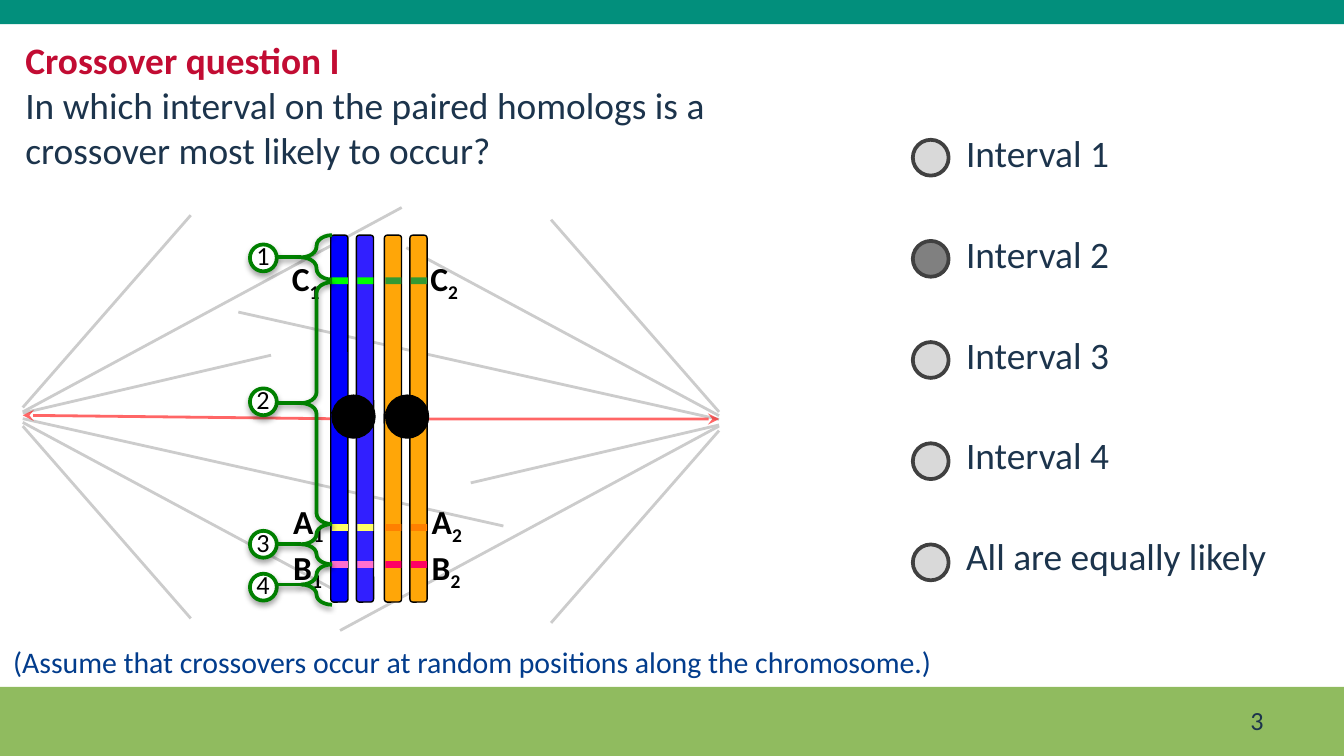
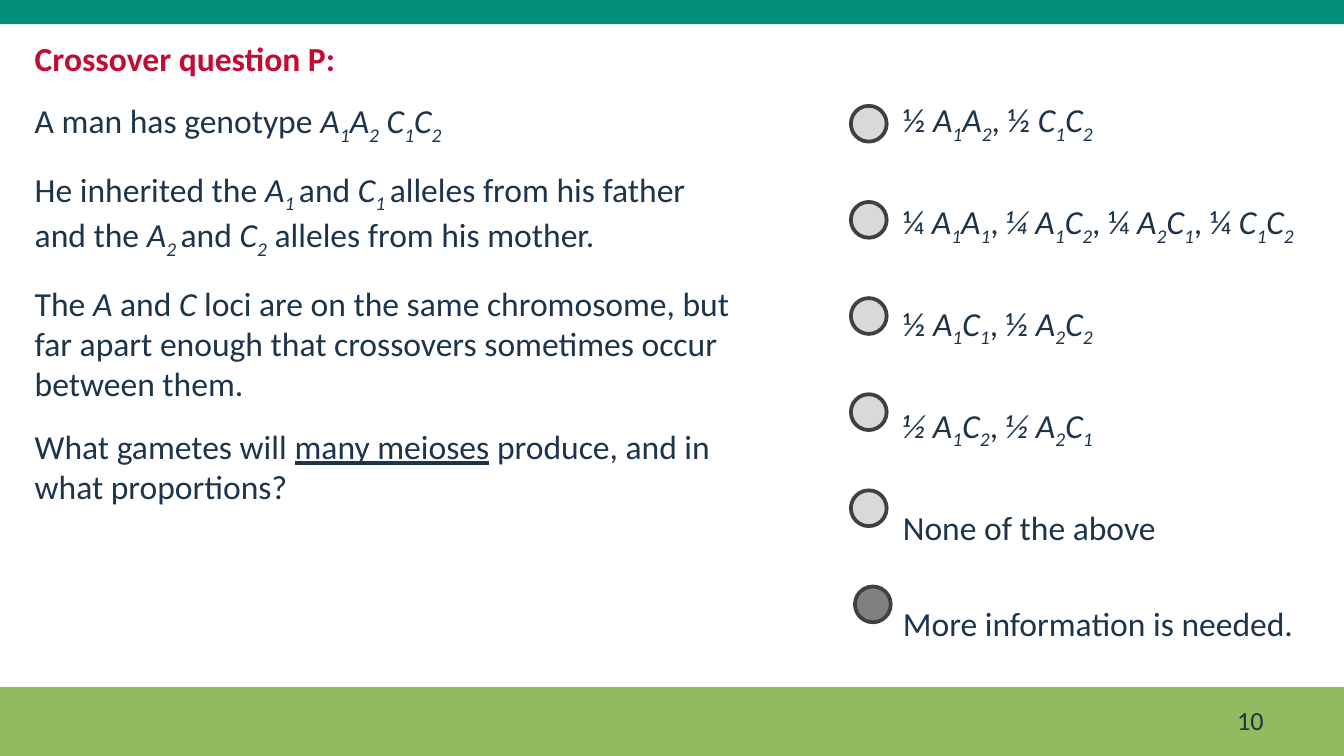
from pptx import Presentation
from pptx.dml.color import RGBColor
from pptx.enum.shapes import MSO_CONNECTOR, MSO_SHAPE
from pptx.enum.text import MSO_ANCHOR, MSO_AUTO_SIZE, PP_ALIGN
from pptx.oxml.ns import qn
from pptx.util import Pt
from lxml.etree import SubElement

WIDTH, HEIGHT = 720, 405
INK, RED, NAVY, BLACK, WHITE = "1C344C", "C20C33", "023C8C", "000000", "FFFFFF"
TEAL, LEAF, GREEN, FIBRE, PULL = "028F7C", "90BB5F", "008000", "CCCCCC", "FF0000"
BUTTON, CHOSEN, BUTTON_EDGE = "D9D9D9", "808080", "404040"
TITLE = {"bold": True, "color": RED}
LABEL = {"size": 18, "bold": True, "color": BLACK}
MARKS = {"*": "italic", "_": "sub", "~": "underline"}


# Formatting helpers
def paint(fill, color):
    fill.solid()
    fill.fore_color.rgb = RGBColor.from_string(color)


def add_shadow(effects, alpha, blur, dist):
    shadow = SubElement(effects, qn("a:outerShdw"), blurRad=str(Pt(blur)),
                        dist=str(Pt(dist)), dir="5400000", rotWithShape="0")
    color = SubElement(shadow, qn("a:srgbClr"), val=BLACK)
    SubElement(color, qn("a:alpha"), val=str(alpha * 1000))


def shape(parent, kind, box, fill=None, line=None, width=0.75, shadow=None, adj=None):
    sp = parent.shapes.add_shape(kind, *map(Pt, box))
    sp.shadow.inherit = False
    if adj is not None:
        sp.adjustments[0] = adj
    if fill:
        paint(sp.fill, fill)
    else:
        sp.fill.background()
    if line:
        paint(sp.line.fill, line)
        sp.line.width = Pt(width)
    else:
        sp.line.fill.background()
    if shadow:
        add_shadow(sp._element.spPr.find(qn("a:effectLst")), *shadow)
    return sp


def line(parent, start, end, color, width=1.5, shadow=None, alpha=None, head=None):
    c = parent.shapes.add_connector(MSO_CONNECTOR.STRAIGHT, *map(Pt, start + end))
    paint(c.line.fill, color)
    c.line.width = Pt(width)
    ln = c.line._get_or_add_ln()
    if alpha:
        SubElement(ln.find(".//" + qn("a:srgbClr")), qn("a:alpha"), val=str(alpha * 1000))
    if head:
        SubElement(ln, qn("a:headEnd"), type=head)
    effects = SubElement(c._element.spPr, qn("a:effectLst"))
    if shadow:
        add_shadow(effects, *shadow)


def split_runs(marked):
    """Yield (text, styles): * toggles italic, _ subscript, ~ underline."""
    styles, buffer = set(), ""
    for ch in marked:
        if ch in MARKS:
            if buffer:
                yield buffer, set(styles)
            buffer = ""
            styles ^= {MARKS[ch]}
        else:
            buffer += ch
    if buffer:
        yield buffer, set(styles)


def add_runs(p, marked, size=18, color=INK, bold=False):
    for words, styles in split_runs(marked):
        r = p.add_run()
        r.text = words
        fmt = {"name": "Calibri", "size": Pt(size), "bold": bold}
        fmt.update({style: True for style in styles - {"sub"}})
        for key, value in fmt.items():
            setattr(r.font, key, value)
        paint(r.font.fill, color)
        if "sub" in styles:
            r._r.get_or_add_rPr().set("baseline", "-25000")


def text(parent, box, paragraphs, after=0, wrap=True, grow=True, hang=0,
         align=PP_ALIGN.LEFT, anchor=MSO_ANCHOR.TOP, **fmt):
    tf = parent.shapes.add_textbox(*map(Pt, box)).text_frame
    frame = {"word_wrap": wrap, "vertical_anchor": anchor,
             "auto_size": MSO_AUTO_SIZE.SHAPE_TO_FIT_TEXT if grow else MSO_AUTO_SIZE.NONE}
    for key, value in frame.items():
        setattr(tf, key, value)
    for i, item in enumerate(paragraphs):
        marked, own = item if isinstance(item, tuple) else (item, {})
        p = tf.add_paragraph() if i else tf.paragraphs[0]
        p.alignment, p.space_after = align, Pt(after)
        if hang:
            pPr = p._p.get_or_add_pPr()
            pPr.set("marL", str(Pt(hang)))
            pPr.set("indent", str(-Pt(hang)))
        add_runs(p, marked, **{**fmt, **own})


# Bands and page number shared by the slides
def frame(s, number):
    shape(s, MSO_SHAPE.RECTANGLE, (0, 368, WIDTH, HEIGHT - 368), LEAF)
    shape(s, MSO_SHAPE.RECTANGLE, (0, 0, WIDTH, 13), TEAL)
    text(s, (516, 375, 168, 21.6), [str(number)], grow=False, size=14,
         align=PP_ALIGN.RIGHT, anchor=MSO_ANCHOR.MIDDLE)


# Column of answer buttons
def buttons(s, x, y, pitch, count, chosen, chosen_shift=0):
    for i in range(count):
        picked = i == chosen
        shape(s, MSO_SHAPE.OVAL,
              (x + chosen_shift * picked, y + i * pitch, 19.2, 19.2),
              CHOSEN if picked else BUTTON, BUTTON_EDGE, 2)


# Spindle fibres, point-symmetric about the centre of the box
def spindle(parent, x, y, w, h):
    cx, cy = x + w / 2, y + h / 2
    fibres = [(-1.8, -167.5, -90), (-3.8, -90, -103), (0.2, -257.5, -57.5),
              (3.8, -203, 109.5), (6.2, -90, 103), (3.2, -133, 31)]
    for side in (1, -1):
        pole = cx + side * w / 2
        for offset, dx, dy in fibres:
            start = (pole, cy + side * offset)
            line(parent, start, (pole + side * dx, start[1] + side * dy), FIBRE)
    for start, end in (((x + w, cy), (x + 194, cy)), ((x, cy - 2), (x + 179.5, cy))):
        line(parent, start, end, PULL, alpha=60, head="stealth")


# One homolog: two chromatids, centromere, gene bands and labels
def homolog(parent, x, y, colors, bands, number, label_x):
    text(parent, (label_x, y + 138.7, 31.7, 51),
         [f"{gene}_{number}_" for gene in "AB"], wrap=False, **LABEL)
    text(parent, (label_x - 0.7, y + 8.6, 33.8, 28.8), [f"C_{number}_"],
         wrap=False, **LABEL)
    lefts = (x, x + 13.7)
    for left, color in zip(lefts, colors):
        for top in (y, y + 94.6):
            shape(parent, MSO_SHAPE.ROUNDED_RECTANGLE, (left, top, 9.2, 102),
                  color, BLACK, adj=0.167)
    shape(parent, MSO_SHAPE.OVAL, (x + 0.7, y + 85.7, 23, 23), BLACK, BLACK)
    for left in lefts:
        for top, color in zip((22.6, 154.8, 174.6), bands):
            shape(parent, MSO_SHAPE.RECTANGLE, (left + 0.6, y + top, 8.6, 3.6), color)


# Numbered intervals with braces
def intervals(s, x, y):
    spans = [(0, 23.8, 12.2), (25.2, 129.6, 89.3), (154.8, 21.6, 165.6), (176.4, 21.6, 188.6)]
    for number, (top, height, centre) in enumerate(spans, 1):
        g = s.shapes.add_group_shape()
        cy, stem = y + centre, y + top + height / 2
        shape(g, MSO_SHAPE.OVAL, (x, cy - 7.2, 14.4, 14.4), WHITE, GREEN, 2, (35, 3.1, 1.8))
        text(g, (x - 3.6, cy - 13.4, 21.6, 24.4), [str(number)], wrap=False,
             size=14, color=BLACK)
        line(g, (x + 14.4, stem), (x + 27.4, stem), GREEN, 2, (38, 3.1, 1.6))
        shape(s, MSO_SHAPE.LEFT_BRACE, (x + 27.4, y + top, 16.6, height),
              None, GREEN, 2, (38, 3.1, 1.6), 0.347)


# Paired homologs on the spindle
def diagram(s, x, y, w, h):
    g = s.shapes.add_group_shape()
    spindle(g, x, y, w, h)
    top = y + 14.5
    homolog(g, x + 193.7, top, ("FFA608", "FFA608"), ("339933", "FF8000", "FF0064"),
            2, x + 212)
    homolog(g, x + 165, top, ("0000FF", "311FFF"), ("00FF00", "FFFF66", "FF6FCF"),
            1, x + 137.8)
    intervals(s, x + 121.7, top)


def interval_slide(s):
    text(s, (6.5, 16.6, 383, 80),
         [("Crossover question I", TITLE),
          "In which interval on the paired homologs is a crossover most likely to occur?"],
         size=20)
    diagram(s, 12.2, 111.5, 373, 226)
    options = [f"Interval {n}" for n in range(1, 5)] + ["All are equally likely"]
    text(s, (510.5, 66.2, 177, 250), options, after=30, wrap=False, hang=13.7, size=20)
    buttons(s, 489, 74.9, 54.2, len(options), chosen=1)
    text(s, (0, 341.3, 513.4, 26.6),
         ["(Assume that crossovers occur at random positions along the chromosome.)"],
         wrap=False, size=16, color=NAVY)
    frame(s, 3)


def gamete_slide(s):
    text(s, (11.5, 16.6, 389.5, 252),
         [("Crossover question P:", TITLE),
          "A man has genotype *A_1_A_2_ C_1_C_2_*",
          "He inherited the *A_1 _*and *C_1 _*alleles from his father and the "
          "*A_2 _*and* C_2_* alleles from his mother.",
          "The *A* and *C* loci are on the same chromosome, but far apart enough "
          "that crossovers sometimes occur between them.",
          "What gametes will ~many meioses~ produce, and in what proportions?"],
         after=12)
    options = ["½ *A_1_A_2_*, ½ *C_1_C_2_*",
               "¼ *A_1_A_1_*, *¼ A_1_C_2_*, ¼ *A_2_C_1_*, ¼ *C_1_C_2_*",
               "½ *A_1_C_1_*, ½ *A_2_C_2_*",
               "*½ A_1_C_2_*, *½ A_2_C_1_*",
               "None of the above",
               "More information is needed."]
    text(s, (476.6, 49.7, 243.4, 289.4), options, after=30)
    buttons(s, 455.8, 56.7, 51.5, len(options), chosen=5, chosen_shift=2.2)
    frame(s, 10)


def main():
    prs = Presentation()
    prs.slide_width, prs.slide_height = Pt(WIDTH), Pt(HEIGHT)
    for build in (interval_slide, gamete_slide):
        build(prs.slides.add_slide(prs.slide_layouts[6]))
    prs.save("out.pptx")


if __name__ == "__main__":
    main()
